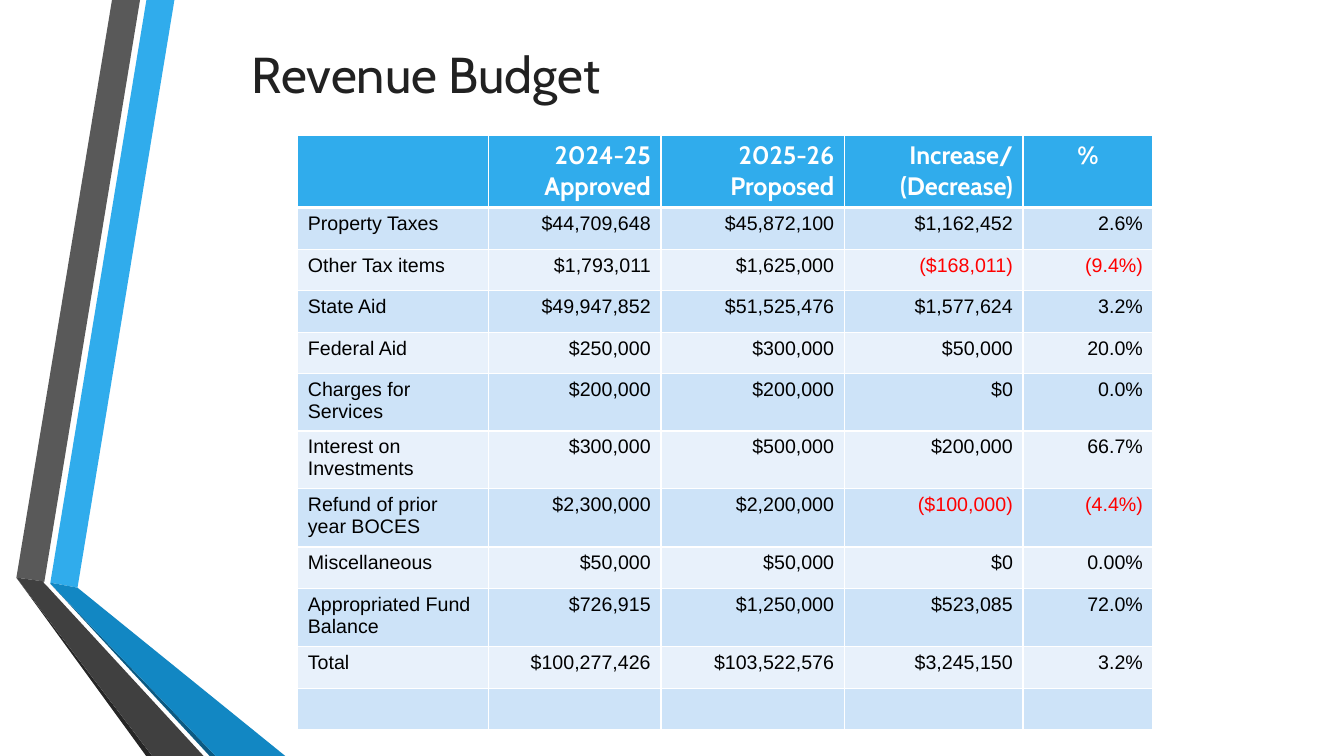
"""Build the revenue budget slide with its ribbon decoration and table."""
from lxml import etree
from pptx import Presentation
from pptx.dml.color import RGBColor
from pptx.enum.text import MSO_ANCHOR, PP_ALIGN
from pptx.oxml.ns import qn
from pptx.util import Pt

LEFT, CENTER, RIGHT = PP_ALIGN.LEFT, PP_ALIGN.CENTER, PP_ALIGN.RIGHT
MIDDLE = MSO_ANCHOR.MIDDLE

WHITE = RGBColor(0xFF, 0xFF, 0xFF)
BLACK = RGBColor(0, 0, 0)
RED = RGBColor(0xFF, 0, 0)
INK = RGBColor(0x21, 0x21, 0x21)
BLUE = RGBColor(0x30, 0xAC, 0xEC)
DEEP_BLUE = RGBColor(0x12, 0x87, 0xC3)
NAVY = RGBColor(0x0C, 0x5A, 0x82)
GRAY = RGBColor(0x59, 0x59, 0x59)
CHARCOAL = RGBColor(0x40, 0x40, 0x40)
DARK = RGBColor(0x26, 0x26, 0x26)
BAND = RGBColor(0xCD, 0xE3, 0xF8)
LIGHT_BAND = RGBColor(0xE8, 0xF1, 0xFB)

TITLE_FORMAT = {"size": Pt(36), "name": "Cabin"}
HEADER_FORMAT = {"size": Pt(18), "name": "Cabin", "bold": True}
BODY_FORMAT = {"size": Pt(14), "name": "Arial", "bold": False}

RIBBONS = [
    (BLUE, [(36, 416.2), (55.4, 419.8), (124.6, 0), (104.6, 0)]),
    (GRAY, [(100, 0), (80, 0), (11.7, 412.6), (31.7, 415.4)]),
    (DARK, [(11.7, 412.6), (104.4, 540), (108.7, 540)]),
    (NAVY, [(36, 416.9), (149.8, 540), (154.1, 540)]),
    (DEEP_BLUE, [(36, 416.2), (36, 416.9), (154.1, 540), (203.8, 540), (55.4, 419.8)]),
    (CHARCOAL, [(145.4, 540), (34.6, 419.8), (31, 416.2), (31.7, 415.4),
                (11.7, 412.6), (108.7, 540)]),
]

COLUMN_WIDTHS = [136, 123.4, 131, 127.7, 92.9]
ROW_HEIGHTS = [51.5, 29.7, 29.7, 29.7, 29.7, 39.5, 38.5, 42, 29.7, 41.7, 29.7, 29.7]
BUDGET = [
    ("", "2024-25 Approved", "2025-26 Proposed", "Increase/ (Decrease)", "%"),
    ("Property Taxes", "$44,709,648", "$45,872,100", "$1,162,452", "2.6%"),
    ("Other Tax items", "$1,793,011", "$1,625,000", "($168,011)", "(9.4%)"),
    ("State Aid", "$49,947,852", "$51,525,476", "$1,577,624", "3.2%"),
    ("Federal Aid", "$250,000", "$300,000", "$50,000", "20.0%"),
    ("Charges for Services", "$200,000", "$200,000", "$0", "0.0%"),
    ("Interest on Investments", "$300,000", "$500,000", "$200,000", "66.7%"),
    ("Refund of prior year BOCES", "$2,300,000", "$2,200,000", "($100,000)", "(4.4%)"),
    ("Miscellaneous", "$50,000", "$50,000", "$0", "0.00%"),
    ("Appropriated Fund Balance", "$726,915", "$1,250,000", "$523,085", "72.0%"),
    ("Total", "$100,277,426", "$103,522,576", "$3,245,150", "3.2%"),
    ("", "", "", "", ""),
]


def write_text(para, text, font_format, color, alignment):
    """Add one formatted span to a paragraph."""
    para.alignment = alignment
    span = para.add_run()
    span.text = text
    for name, value in font_format.items():
        setattr(span.font, name, value)
    span.font.color.rgb = color


def add_ribbon(page, color, points):
    """Draw one filled polygon of the ribbon."""
    corners = [(Pt(x), Pt(y)) for x, y in points]
    builder = page.shapes.build_freeform(*corners[0])
    builder.add_line_segments(corners[1:], close=True)
    ribbon = builder.convert_to_shape()
    ribbon.shadow.inherit = False
    ribbon.fill.solid()
    ribbon.fill.fore_color.rgb = color
    ribbon.line.fill.background()


def add_title(page, text):
    """Add the slide title."""
    box = page.shapes.add_textbox(Pt(158.4), Pt(26.6), Pt(292.3), Pt(51.8))
    frame = box.text_frame
    frame.word_wrap = True
    frame.vertical_anchor = MIDDLE
    write_text(frame.paragraphs[0], text, TITLE_FORMAT, INK, CENTER)


def set_borders(cell, widths):
    """Give a cell solid white borders, keyed by side."""
    properties = cell._tc.get_or_add_tcPr()
    for side, width in widths.items():
        line = etree.SubElement(properties, qn(f"a:ln{side}"), w=str(Pt(width)))
        fill = etree.SubElement(line, qn("a:solidFill"))
        etree.SubElement(fill, qn("a:srgbClr"), val=str(WHITE))


def fill_cell(cell, text, row, column):
    """Style a table cell by its place and write its text."""
    set_borders(cell, {"L": 1, "R": 1, "T": 3 if row == 1 else 1, "B": 3 if row == 0 else 1})
    cell.fill.solid()
    if row == 0:
        cell.fill.fore_color.rgb = BLUE
        font_format, color = HEADER_FORMAT, WHITE
        alignment = CENTER if column == 4 else RIGHT
    else:
        cell.fill.fore_color.rgb = BAND if row % 2 else LIGHT_BAND
        font_format, color = BODY_FORMAT, RED if text.startswith("(") else BLACK
        alignment = RIGHT if column else LEFT
    if text:
        write_text(cell.text_frame.paragraphs[0], text, font_format, color, alignment)


def add_budget_table(page):
    """Add the revenue table."""
    table = page.shapes.add_table(
        len(BUDGET), len(COLUMN_WIDTHS), Pt(212.7), Pt(96.8),
        Pt(sum(COLUMN_WIDTHS)), Pt(sum(ROW_HEIGHTS))).table
    for column, width in zip(table.columns, COLUMN_WIDTHS):
        column.width = Pt(width)
    for row, height in zip(table.rows, ROW_HEIGHTS):
        row.height = Pt(height)
    for row, values in enumerate(BUDGET):
        for column, text in enumerate(values):
            fill_cell(table.cell(row, column), text, row, column)


def main():
    """Create the deck and save it."""
    deck = Presentation()
    deck.slide_width, deck.slide_height = Pt(960), Pt(540)
    page = deck.slides.add_slide(deck.slide_layouts[6])
    for color, points in RIBBONS:
        add_ribbon(page, color, points)
    add_title(page, "Revenue Budget")
    add_budget_table(page)
    deck.save("out.pptx")


if __name__ == "__main__":
    main()
